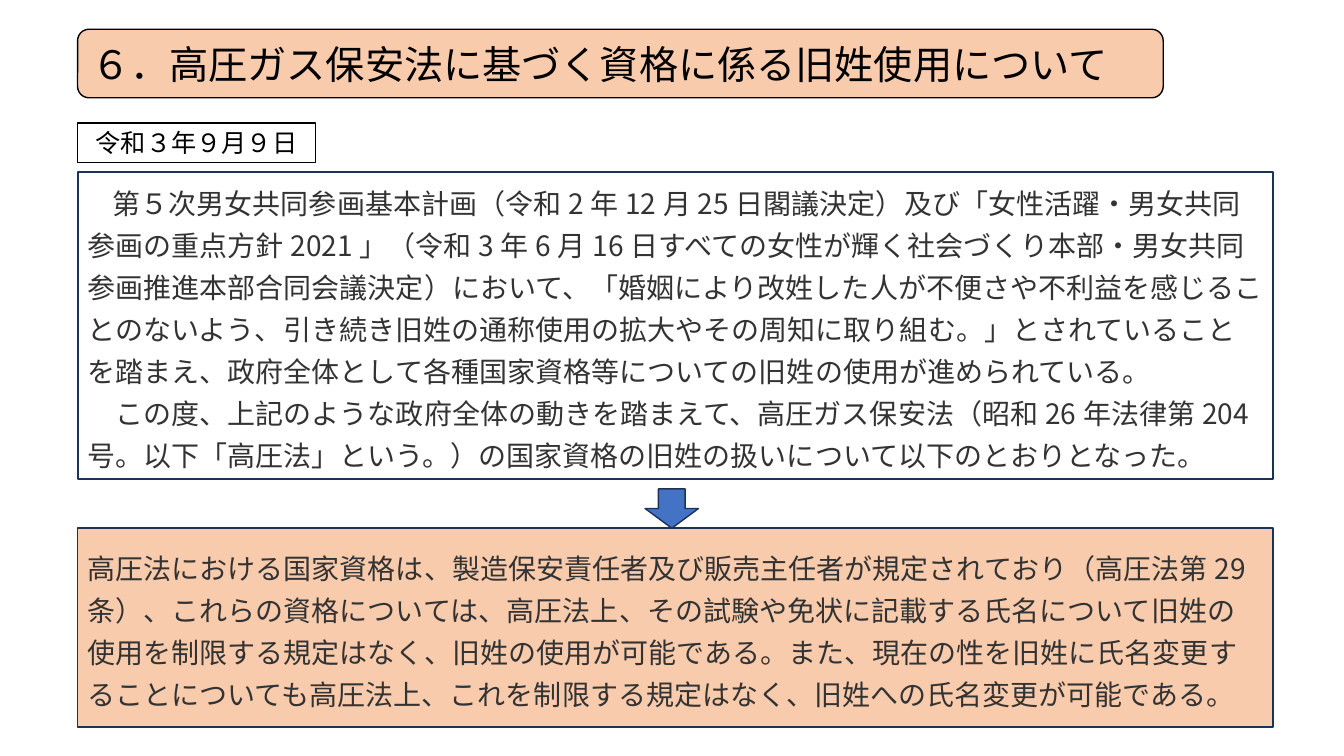
from lxml import etree
from pptx import Presentation
from pptx.dml.color import RGBColor
from pptx.enum import shapes, text
from pptx.oxml import ns
from pptx.util import Pt

FONT = "Noto Sans CJK JP"
BLACK, GREY, WHITE = "000000", "333333", "FFFFFF"
PEACH, NAVY, BLUE = "F8CBAD", "1E3256", "4472C4"
LEFT, WIDTH = 55.44, 853.92  # shared by both body panels

TITLE = "６．高圧ガス保安法に基づく資格に係る旧姓使用について"
DATE = "令和３年９月９日"
BACKGROUND = (
    "第５次男女共同参画基本計画（令和2年12月25日閣議決定）及び「女性活躍・男女共同"
    "参画の重点方針2021」（令和3年6月16日すべての女性が輝く社会づくり本部・男女共同"
    "参画推進本部合同会議決定）において、「婚姻により改姓した人が不便さや不利益を感じるこ"
    "とのないよう、引き続き旧姓の通称使用の拡大やその周知に取り組む。」とされていること"
    "を踏まえ、政府全体として各種国家資格等についての旧姓の使用が進められている。\v"
    "　この度、上記のような政府全体の動きを踏まえて、高圧ガス保安法（昭和26年法律第204"
    "号。以下「高圧法」という。）の国家資格の旧姓の扱いについて以下のとおりとなった。"
)
CONCLUSION = (
    "高圧法における国家資格は、製造保安責任者及び販売主任者が規定されており（高圧法第29"
    "条）、これらの資格については、高圧法上、その試験や免状に記載する氏名について旧姓の"
    "使用を制限する規定はなく、旧姓の使用が可能である。また、現在の性を旧姓に氏名変更す"
    "ることについても高圧法上、これを制限する規定はなく、旧姓への氏名変更が可能である。"
)


def color(value):
    return RGBColor.from_string(value)


def place(shape, left, top, width, height):
    shape.left, shape.top = Pt(left), Pt(top)
    shape.width, shape.height = Pt(width), Pt(height)


def add_box(page, kind, bounds, fill, line, weight):
    box = page.shapes.add_shape(kind, *map(Pt, bounds))
    box.shadow.inherit = False
    if fill:
        box.fill.solid()
        box.fill.fore_color.rgb = color(fill)
    else:
        box.fill.background()
    box.line.color.rgb = color(line)
    box.line.width = Pt(weight)
    return box


def write(box, content, size, ink, align=text.PP_ALIGN.LEFT, spacing=None):
    frame = box.text_frame
    frame.word_wrap = True
    frame.auto_size = text.MSO_AUTO_SIZE.NONE
    frame.vertical_anchor = text.MSO_ANCHOR.MIDDLE
    para = frame.paragraphs[0]
    para.text = content
    para.alignment = align
    if spacing:
        para.line_spacing = Pt(spacing)
    para.font.size = Pt(size)
    para.font.color.rgb = color(ink)
    para.font.name = FONT
    # East Asian typeface follows the Latin one
    latin = next(para._p.iter(ns.qn("a:latin")))
    east_asian = etree.Element(ns.qn("a:ea"), typeface=FONT)
    latin.addnext(east_asian)
    return para


def main():
    deck = Presentation()
    deck.slide_width, deck.slide_height = Pt(960), Pt(540)
    page = deck.slides.add_slide(deck.slide_layouts[5])
    kinds = shapes.MSO_SHAPE

    # Title on its rounded band
    band = (LEFT, 20.88, 775.44, 48.96)
    add_box(page, kinds.ROUNDED_RECTANGLE, band, PEACH, BLACK, 1)
    title = page.shapes.title
    place(title, LEFT + 2.4, *band[1:])
    write(title, TITLE, 28, BLACK)
    page.shapes._spTree.append(title._element)  # bring in front of the band

    # Date label
    date = add_box(page, kinds.RECTANGLE, (LEFT, 87.84, 169.92, 28.08), WHITE, BLACK, 1)
    write(date, DATE, 18, BLACK, text.PP_ALIGN.CENTER)

    # Background panel, opening with a slightly smaller indent
    panel = add_box(page, kinds.RECTANGLE, (LEFT, 123.12, WIDTH, 218.88), None, NAVY, 1.5)
    para = write(panel, "　" + BACKGROUND, 20, GREY, spacing=30)
    para.text = BACKGROUND
    indent = para.add_run()
    indent.text = "　"
    indent.font.size = Pt(18)
    para.runs[0]._r.addprevious(indent._r)

    # Conclusion panel
    panel = add_box(page, kinds.RECTANGLE, (LEFT, 377.28, WIDTH, 141.84), PEACH, NAVY, 1.25)
    write(panel, CONCLUSION, 20, GREY, spacing=30)

    # Arrow between the panels
    add_box(page, kinds.DOWN_ARROW, (460.8, 349.2, 38.16, 28.08), BLUE, NAVY, 1)

    deck.save("out.pptx")


if __name__ == "__main__":
    main()
